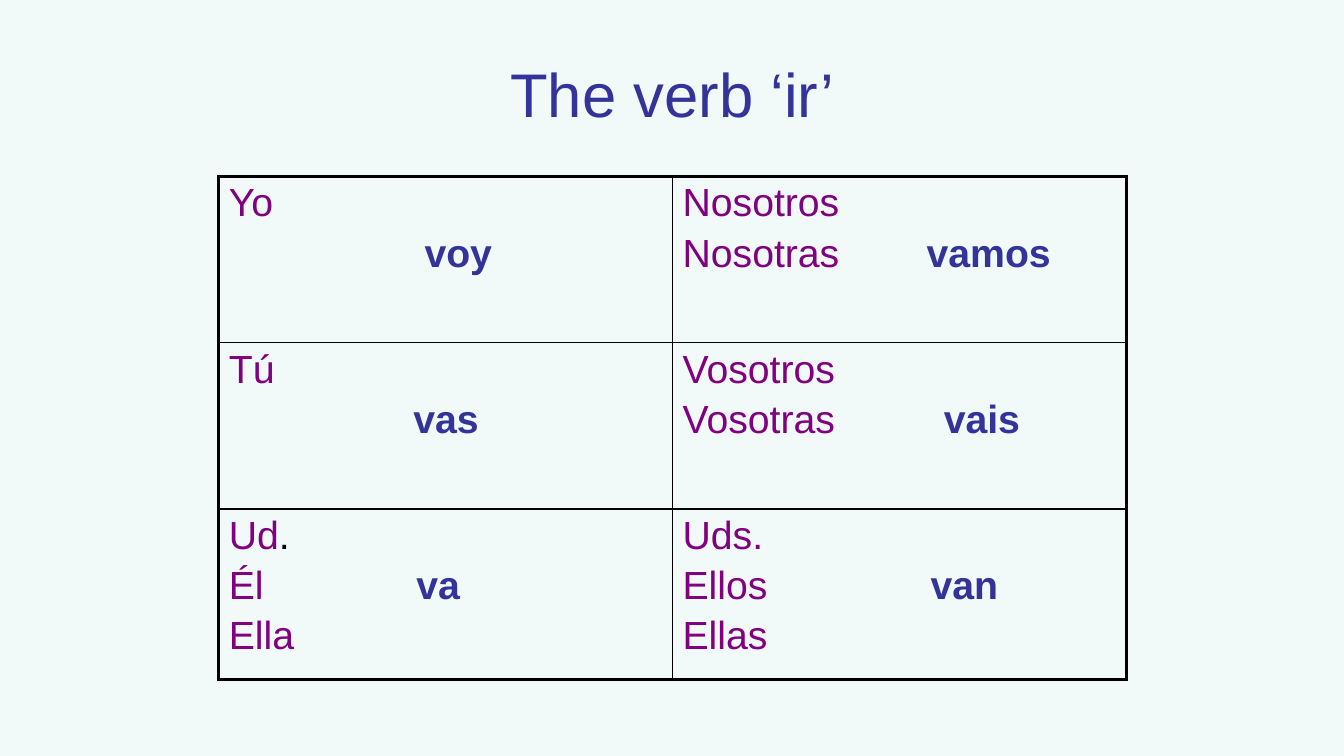
import lxml.etree
import pptx
import pptx.dml.color
import pptx.enum.text
import pptx.oxml.ns
import pptx.util

Inches, Pt = pptx.util.Inches, pptx.util.Pt
qn = pptx.oxml.ns.qn

COLORS = {"bg": "F1F9F9", "verb": "333399", "pronoun": "800080", "black": "000000"}
PRONOUN = {"size": Pt(28), "name": "Arial", "bold": False, "color": "pronoun"}
VERB = {**PRONOUN, "bold": True, "color": "verb"}
STOP = {**PRONOUN, "color": "black"}
TITLE = {**VERB, "size": Pt(44), "bold": False}
OUTER, INNER = 2.25, 1
ROW_HEIGHTS = (1.65, 1.65, 1.69)

# Each cell: pronouns, verb form, and where the verb starts (inches from the text edge)
CONJUGATION = [
    [(["Yo", ""], "voy", 1.94), (["Nosotros", "Nosotras"], "vamos", 2.42)],
    [(["Tú", ""], "vas", 1.83), (["Vosotros", "Vosotras"], "vais", 2.59)],
    [(["Ud.", "Él", "Ella"], "va", 1.86), (["Uds.", "Ellos", "Ellas"], "van", 2.46)],
]


def rgb(name):
    return pptx.dml.color.RGBColor.from_string(COLORS[name])


def add_run(p, text, style):
    r = p.add_run()
    r.text = text
    for key, value in style.items():
        if key == "color":
            r.font.color.rgb = rgb(value)
        else:
            setattr(r.font, key, value)


def add_tab_stop(p, inches):
    tabs = lxml.etree.SubElement(p._p.get_or_add_pPr(), qn("a:tabLst"))
    lxml.etree.SubElement(tabs, qn("a:tab"), pos=str(Inches(inches)), algn="l")


def set_borders(cell, widths):
    """Draw black borders; widths maps the sides L, R, T, B to points."""
    tcPr = cell._tc.get_or_add_tcPr()
    for side, width in widths.items():
        ln = lxml.etree.SubElement(tcPr, qn("a:ln" + side), w=str(Pt(width)))
        fill = lxml.etree.SubElement(ln, qn("a:solidFill"))
        lxml.etree.SubElement(fill, qn("a:srgbClr"), val=COLORS["black"])


def fill_cell(cell, pronouns, verb, verb_start):
    """Stack the pronouns and set the verb beside the second one."""
    tf = cell.text_frame
    for i, pronoun in enumerate(pronouns):
        p = tf.add_paragraph() if i else tf.paragraphs[0]
        if i:
            p.space_before = Pt(4.6)
        if pronoun == "Ud.":
            add_run(p, "Ud", PRONOUN)
            add_run(p, ".", STOP)
        elif pronoun:
            add_run(p, pronoun, PRONOUN)
        if i == 1:
            add_tab_stop(p, verb_start)
            add_run(p, "\t" + verb, VERB)


def add_title(s, text, left, top, width, height):
    title = s.shapes.title
    title.left, title.top, title.width, title.height = map(
        Inches, (left, top, width, height))
    tf = title.text_frame
    tf.word_wrap = True
    tf.vertical_anchor = pptx.enum.text.MSO_ANCHOR.MIDDLE
    p = tf.paragraphs[0]
    p.alignment = pptx.enum.text.PP_ALIGN.CENTER
    add_run(p, text, TITLE)


def add_conjugation(s, left, top, width):
    rows, cols = len(CONJUGATION), len(CONJUGATION[0])
    box = map(Inches, (left, top, width, sum(ROW_HEIGHTS)))
    table = s.shapes.add_table(rows, cols, *box).table
    table.first_row = table.horz_banding = False
    for row, height in zip(table.rows, ROW_HEIGHTS):
        row.height = Inches(height)
    for i, entries in enumerate(CONJUGATION):
        for j, entry in enumerate(entries):
            cell = table.cell(i, j)
            edges = {"L": j == 0, "R": j == cols - 1, "T": i == 0, "B": i == rows - 1}
            set_borders(cell, {k: OUTER if e else INNER for k, e in edges.items()})
            cell.fill.background()
            fill_cell(cell, *entry)


def main():
    prs = pptx.Presentation()
    prs.slide_width, prs.slide_height = Inches(13.33), Inches(7.5)
    s = prs.slides.add_slide(prs.slide_layouts[5])
    s.background.fill.solid()
    s.background.fill.fore_color.rgb = rgb("bg")
    add_title(s, "The verb ‘ir’", 0.67, 0.3, 12, 1.25)
    add_conjugation(s, 2.17, 1.75, 9)
    prs.save("out.pptx")


if __name__ == "__main__":
    main()
